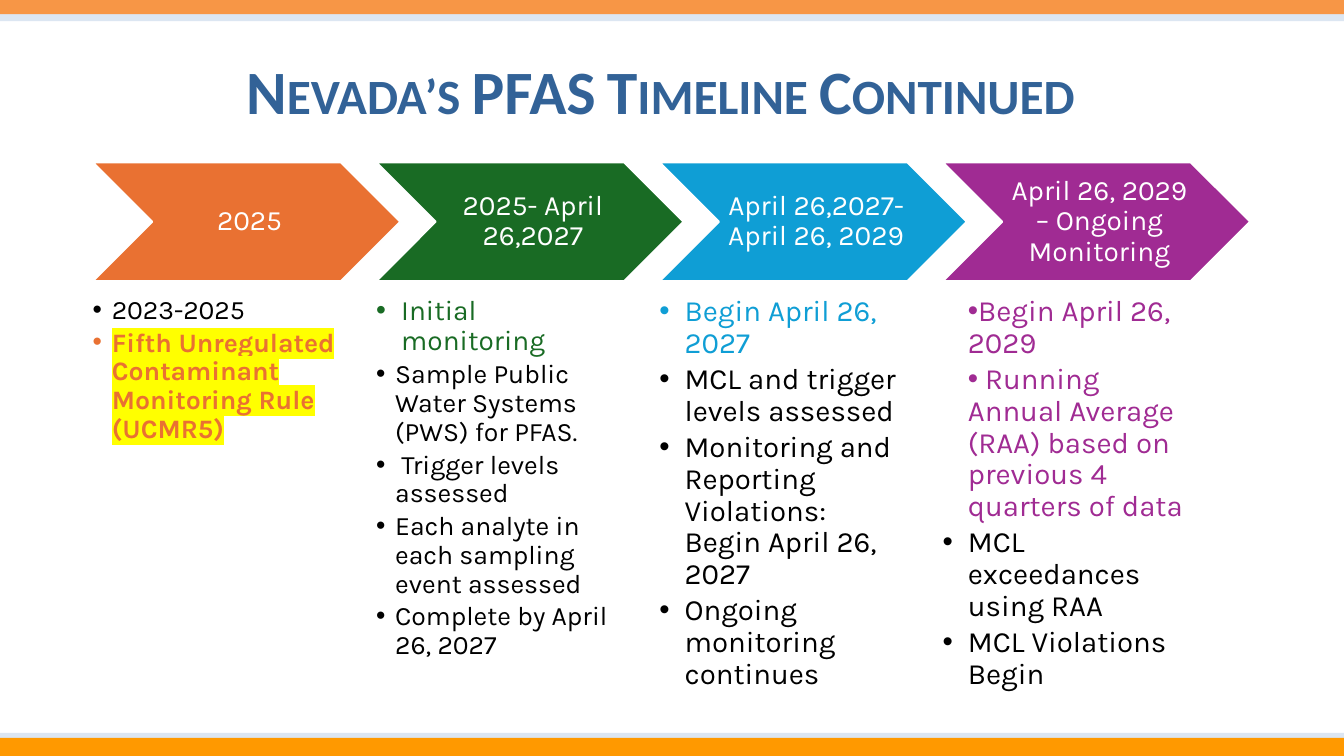
from lxml import etree
from pptx import Presentation
from pptx import util as u
from pptx.dml.color import RGBColor
from pptx.enum import shapes, text
from pptx.oxml import ns

WIDTH, HEIGHT = 13.33, 7.5
LEFT, PITCH = 0.92, 2.81
CHEVRON_TOP, CHEVRON_W, CHEVRON_H = 1.61, 3.05, 1.18
LIST_TOP, LIST_W, LIST_H = 2.94, 2.44, 4.03
WIDE, NARROW = 0.25, 0.19

COLORS = {
    "white": "FFFFFF", "black": "000000", "title": "326297",
    "orange": "E97132", "green": "196B24", "blue": "0F9ED5", "purple": "A02B93",
    "highlight": "FFFF00", "pale": "DCE6F2", "top": "F79646", "bottom": "FF9900",
}

# Bars: top, height, colour
BARS = [(0.1, 0.11, "pale"), (0, 0.14, "top"), (7.27, 0.1, "pale"), (7.32, 0.18, "bottom")]

# Stages: chevron colour, period, bullets as (text, size, colour, margin, hanging indent)
STAGES = [
    ("orange", "2025", [
        ("2023-2025", 19, "black", NARROW, NARROW),
        ("Fifth Unregulated Contaminant Monitoring Rule (UCMR5)", 19, "orange", NARROW, NARROW),
    ]),
    ("green", "2025- April 26,2027", [
        ("Initial monitoring", 20, "green", WIDE, WIDE),
        ("Sample Public Water Systems (PWS) for PFAS.", 19, "black", NARROW, NARROW),
        (" Trigger levels assessed", 19, "black", NARROW, NARROW),
        ("Each analyte in each sampling event assessed", 19, "black", NARROW, NARROW),
        ("Complete by April 26, 2027", 19, "black", NARROW, NARROW),
    ]),
    ("blue", "April 26,2027-April 26, 2029", [
        ("Begin April 26, 2027", 21, "blue", WIDE, WIDE),
        ("MCL and trigger levels assessed", 21, "black", WIDE, WIDE),
        ("Monitoring and Reporting Violations: Begin April 26, 2027", 21, "black", WIDE, WIDE),
        ("Ongoing monitoring continues", 21, "black", WIDE, WIDE),
    ]),
    ("purple", "April 26, 2029 – Ongoing Monitoring", [
        ("Begin April 26, 2029", 21, "purple", WIDE, 0),
        (" Running Annual Average (RAA) based on previous 4 quarters of data",
         21, "purple", WIDE, 0),
        ("MCL exceedances using RAA", 21, "black", WIDE, WIDE),
        ("MCL Violations Begin", 21, "black", WIDE, WIDE),
    ]),
]


def rgb(name):
    return RGBColor.from_string(COLORS[name])


def inches(*lengths):
    return [u.Inches(length) for length in lengths]


def set_insets(tf, left, top, right, bottom):
    tf.margin_left, tf.margin_top, tf.margin_right, tf.margin_bottom = inches(
        left, top, right, bottom)


def style_run(r, size, color, font="Karla", bold=False):
    r.font.size, r.font.name, r.font.bold = u.Pt(size), font, bold
    r.font.color.rgb = rgb(color)


def highlight(r, color):
    fill = r.font._element.find(ns.qn("a:solidFill"))
    mark = etree.Element(ns.qn("a:highlight"))
    etree.SubElement(mark, ns.qn("a:srgbClr"), val=COLORS[color])
    fill.addnext(mark)


def add_bullet(p, margin, hanging):
    pPr = p._p.get_or_add_pPr()
    pPr.set("marL", str(u.Inches(margin)))
    pPr.set("indent", str(-u.Inches(hanging)))
    etree.SubElement(pPr, ns.qn("a:buFont"), typeface="Arial")
    etree.SubElement(pPr, ns.qn("a:buChar"), char="•")


def add_filled(s, kind, box, color):
    sp = s.shapes.add_shape(kind, *inches(*box))
    sp.shadow.inherit = False
    sp.fill.solid()
    sp.fill.fore_color.rgb = rgb(color)
    sp.line.fill.background()
    return sp


def add_chevron(s, left, color, period):
    sp = add_filled(s, shapes.MSO_SHAPE.CHEVRON,
                    (left, CHEVRON_TOP, CHEVRON_W, CHEVRON_H), color)
    sp.line.color.rgb, sp.line.width = rgb("white"), u.Pt(1.5)
    tf = sp.text_frame
    tf.word_wrap, tf.vertical_anchor = True, text.MSO_ANCHOR.MIDDLE
    set_insets(tf, 0.09, 0.03, 0.03, 0.03)
    p = tf.paragraphs[0]
    p.text, p.alignment, p.line_spacing = period, text.PP_ALIGN.CENTER, 0.9
    style_run(p.runs[0], 20, "white")


def add_list(s, left, bullets):
    tf = s.shapes.add_textbox(*inches(left, LIST_TOP, LIST_W, LIST_H)).text_frame
    tf.word_wrap = True
    set_insets(tf, 0, 0, 0, 0)
    tf.text = "\n".join(bullet[0] for bullet in bullets)
    for p, (words, size, color, margin, hanging) in zip(tf.paragraphs, bullets):
        add_bullet(p, margin, hanging)
        p.line_spacing, p.space_after = 0.9, u.Pt(0.15 * size)
        marked = "UCMR5" in words
        style_run(p.runs[0], size, color, bold=marked)
        if marked:
            highlight(p.runs[0], "highlight")


def format_title(sp, words):
    sp.left, sp.top, sp.width, sp.height = inches(1.55, 0.47, 10, 0.84)
    tf = sp.text_frame
    tf.text = words
    tf.word_wrap, tf.auto_size = True, text.MSO_AUTO_SIZE.NONE
    p = tf.paragraphs[0]
    p.alignment = text.PP_ALIGN.CENTER
    style_run(p.runs[0], 44, "title", "Calibri", bold=True)
    p.runs[0].font._element.set("cap", "small")


def main():
    prs = Presentation()
    prs.slide_width, prs.slide_height = inches(WIDTH, HEIGHT)
    s = prs.slides.add_slide(prs.slide_layouts[5])
    for column, (color, period, bullets) in enumerate(STAGES):
        left = LEFT + column * PITCH
        add_chevron(s, left, color, period)
        add_list(s, left, bullets)
    for top, height, color in BARS:
        add_filled(s, shapes.MSO_SHAPE.RECTANGLE, (0, top, WIDTH, height), color)
    format_title(s.shapes.title, "Nevada’s PFAS Timeline Continued")
    prs.save("out.pptx")


if __name__ == "__main__":
    main()
